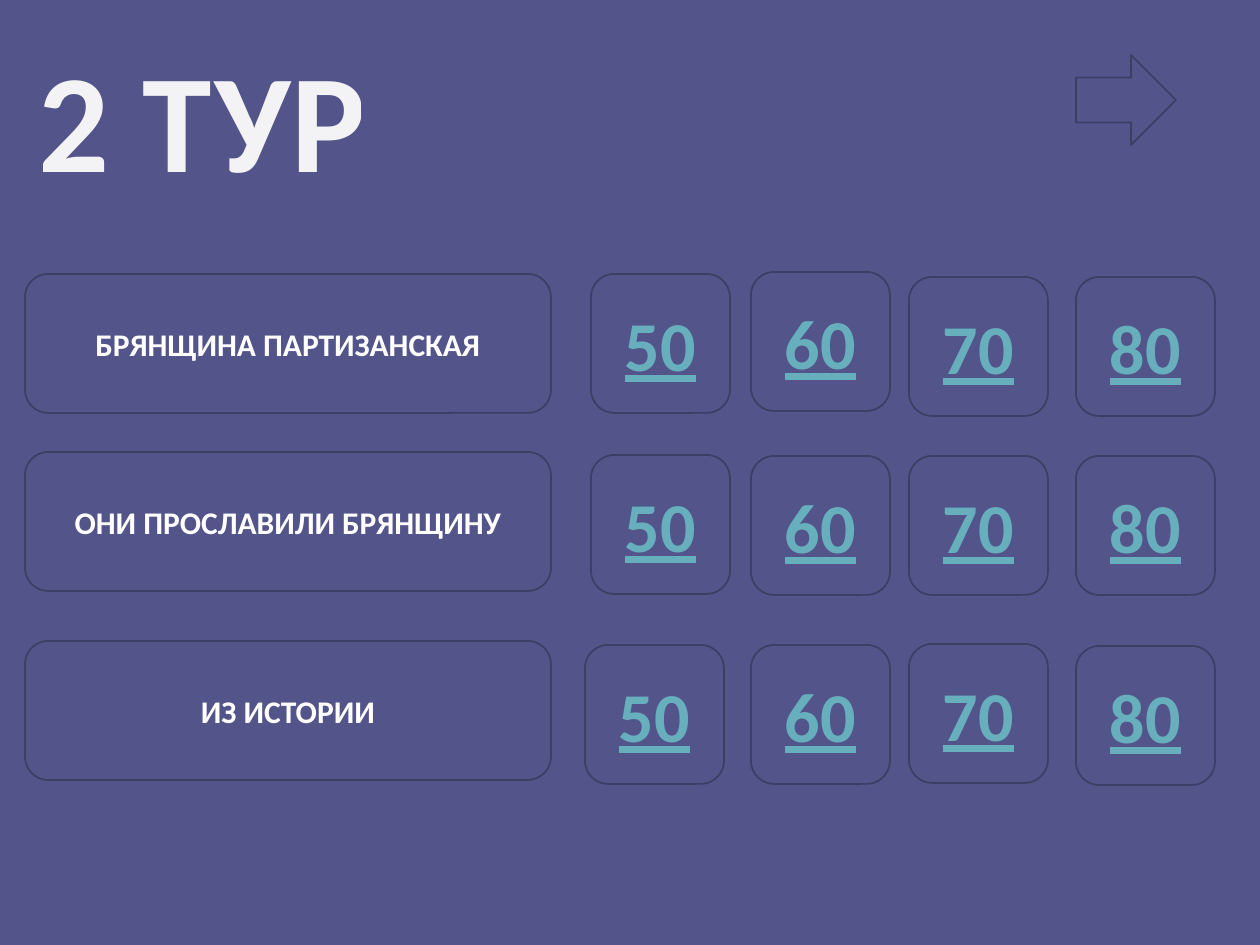
from dataclasses import dataclass

from lxml import etree
from pptx import Presentation
from pptx.dml.color import RGBColor as Rgb
from pptx.enum.shapes import MSO_SHAPE as Shape
from pptx.enum.text import MSO_ANCHOR as Anchor, MSO_AUTO_SIZE as AutoSize, PP_ALIGN as Align
from pptx.oxml.ns import qn
from pptx.util import Pt

PX = 914400 / 126  # EMU per pixel


@dataclass
class Theme:
    font: str = "Calibri"
    base: Rgb = Rgb.from_string("53548A")
    edge: Rgb = Rgb.from_string("3D3E66")
    title: Rgb = Rgb.from_string("FCFCFC")
    label: Rgb = Rgb.from_string("FFFFFF")
    points: Rgb = Rgb.from_string("67AFBD")
    title_size: int = 80
    label_size: int = 18
    points_size: int = 40


theme = Theme()


def style_text(shape, text, size, color, underline=None):
    para = shape.text_frame.paragraphs[0]
    para.text = text
    para.alignment = Align.CENTER
    font = para.font
    font.name, font.size, font.bold = theme.font, Pt(size), True
    font.color.rgb = color
    font.underline = underline


def add_box(kind, left, top, width, height):
    box = page.shapes.add_shape(kind, *(round(n * PX) for n in (left, top, width, height)))
    box.shadow.inherit = False
    box.fill.solid()
    box.fill.fore_color.rgb = theme.base
    box.line.color.rgb = theme.edge
    box.line.width = Pt(1)
    box.text_frame.word_wrap = True
    box.text_frame.vertical_anchor = Anchor.MIDDLE
    return box


deck = Presentation()
deck.slide_width, deck.slide_height = round(1260 * PX), round(945 * PX)
page = deck.slides.add_slide(deck.slide_layouts[5])
page.background.fill.solid()
page.background.fill.fore_color.rgb = theme.base

# Title, slightly transparent and letter-spaced
title = page.shapes.title
title.left, title.top = 0, round(26 * PX)
title.width, title.height = round(406 * PX), round(183 * PX)
frame = title.text_frame
frame.word_wrap = False
frame.auto_size = AutoSize.SHAPE_TO_FIT_TEXT
frame.vertical_anchor = Anchor.TOP
style_text(title, "2 ТУР", theme.title_size, theme.title)
span = frame.paragraphs[0].runs[0]
span.font.color.rgb = theme.title
properties = span.font._element
properties.set("spc", "50")
color = properties.find(".//" + qn("a:srgbClr"))
etree.SubElement(color, qn("a:alpha")).set("val", "95000")

# Topics: name, top of its label, then left and top of each points tile
TILE = 139
topics = [
    ("БРЯНЩИНА ПАРТИЗАНСКАЯ", 274, [(591, 274), (751, 272), (909, 277), (1076, 277)]),
    ("ОНИ ПРОСЛАВИЛИ БРЯНЩИНУ", 452, [(591, 455), (751, 456), (909, 456), (1076, 456)]),
    ("ИЗ ИСТОРИИ", 641, [(585, 645), (751, 645), (909, 644), (1076, 646)]),
]
for name, label_top, tiles in topics:
    label = add_box(Shape.ROUNDED_RECTANGLE, 25, label_top, 526, TILE)
    style_text(label, name, theme.label_size, theme.label)
    for points, (left, top) in zip((50, 60, 70, 80), tiles):
        tile = add_box(Shape.ROUNDED_RECTANGLE, left, top, TILE, TILE)
        style_text(tile, str(points), theme.points_size, theme.points, underline=True)

# Arrow to the next round
add_box(Shape.RIGHT_ARROW, 1076, 55, 100, 90)

deck.save("out.pptx")
